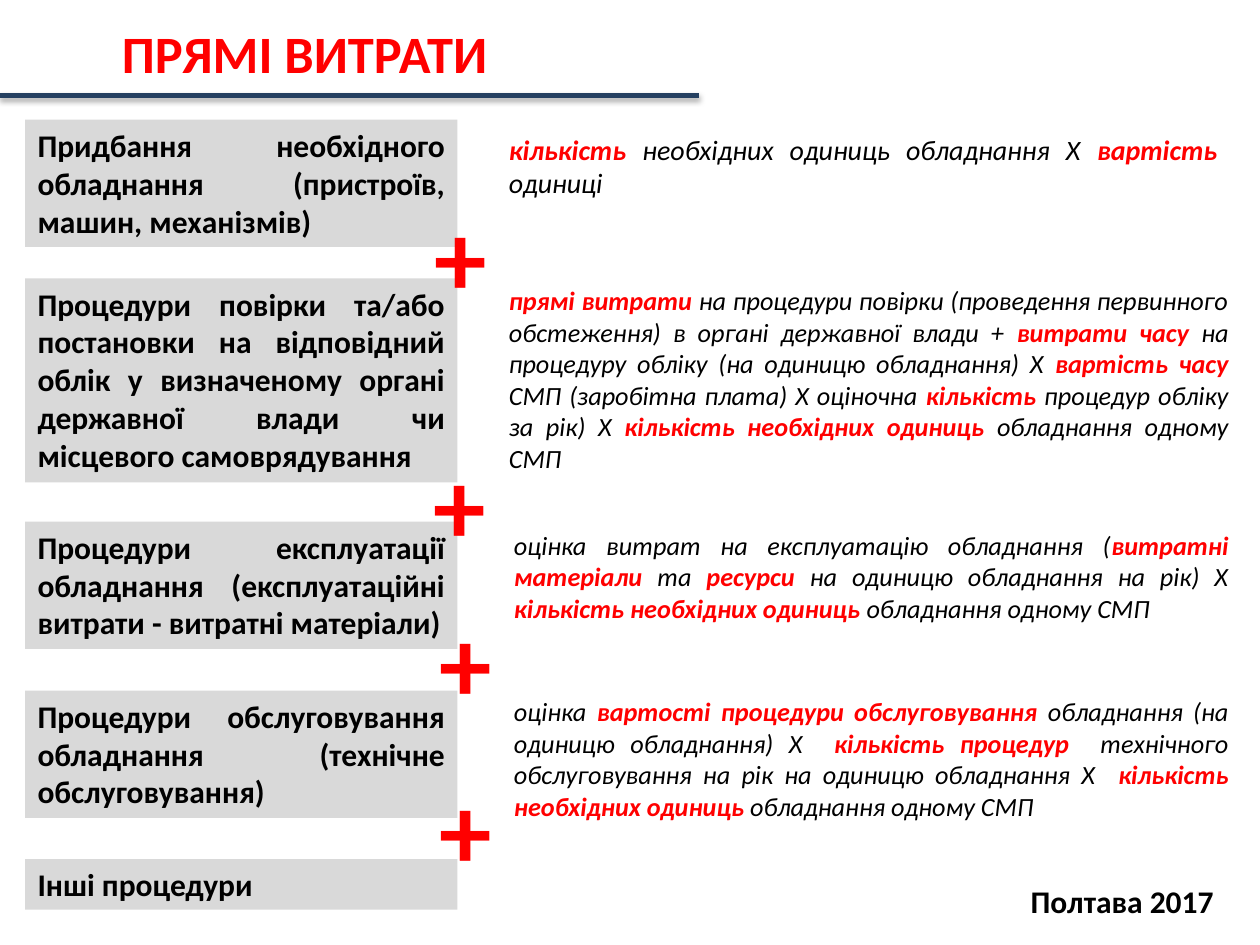
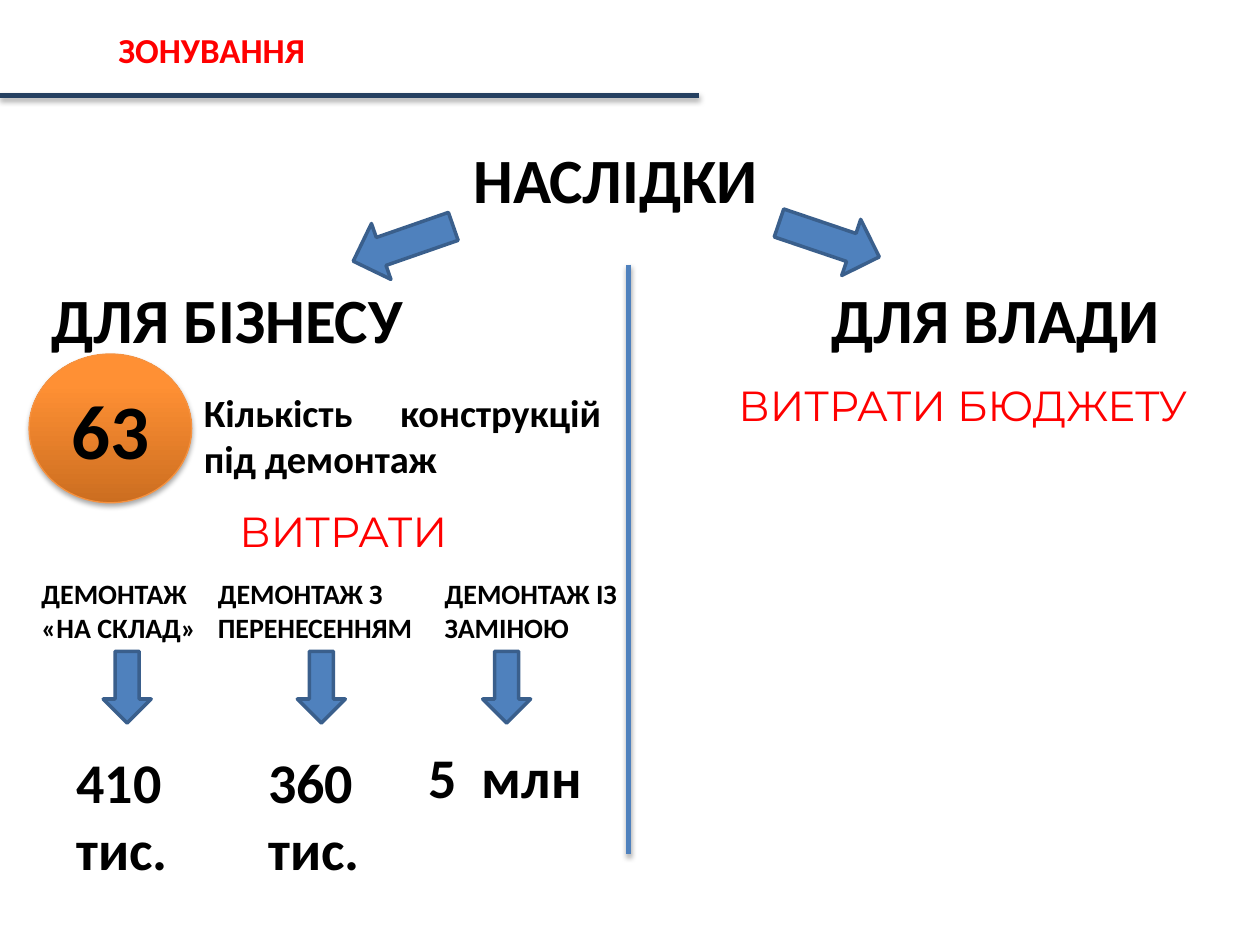
import pptx
import copy
import pptx.util
import pptx.dml.color
import pptx.enum.shapes
import pptx.enum.text
import pptx.oxml.ns
from lxml import etree

Pt = pptx.util.Pt
SHAPE = pptx.enum.shapes.MSO_SHAPE
ALIGN = pptx.enum.text.PP_ALIGN
AUTO = pptx.enum.text.MSO_AUTO_SIZE
ANCHOR = pptx.enum.text.MSO_ANCHOR
qn = pptx.oxml.ns.qn

COLORS = {
    "text": "000000", "accent": "FF0000", "rule": "254061", "panel": "D9D9D9",
    "blue": "4F81BD", "blue_edge": "3A5F8C", "orange_edge": "F69240",
    "orange_dark": "CC6E20", "orange_mid": "FF9034", "orange_light": "FF9136",
}


def rgb(name):
    return pptx.dml.color.RGBColor.from_string(COLORS[name])


class Deck:
    """Holds the shared style and the slide being built."""

    font = "Calibri"

    def __init__(self):
        self.prs = pptx.Presentation()
        self.prs.slide_width, self.prs.slide_height = Pt(720), Pt(540)
        self.slide = None

    def new_slide(self, title, x, y, w, h, size):
        self.slide = self.prs.slides.add_slide(self.prs.slide_layouts[6])
        self.line(0, 54.7, 399.6, 54.7, "rule")
        self.text(title, x, y, w, h, size, color="accent")

    def set_text(self, sp, text, size, color="text", bold=True, align=ALIGN.LEFT, font=None):
        """Fills a shape; parts between asterisks are bold in the accent colour."""
        tf = sp.text_frame
        tf.word_wrap = True
        for i, row in enumerate(text.split("\n")):
            p = tf.add_paragraph() if i else tf.paragraphs[0]
            p.alignment = align
            p.font.size, p.font.name = Pt(size), font or self.font
            parts = row.split("*")
            if len(parts) == 1:
                p.font.bold, p.font.color.rgb = bold, rgb(color)
                p.add_run().text = row
                continue
            p.font.italic = True
            for j, part in enumerate(parts):
                if part:
                    r = p.add_run()
                    r.text = part
                    r.font.bold = j % 2 == 1
                    r.font.color.rgb = rgb("accent" if j % 2 else color)

    def text(self, text, x, y, w, h, size, **style):
        sp = self.slide.shapes.add_textbox(Pt(x), Pt(y), Pt(w), Pt(h))
        self.set_text(sp, text, size, **style)
        sp.text_frame.auto_size = AUTO.SHAPE_TO_FIT_TEXT

    def shape(self, kind, x, y, w, h, fill=None, edge=None, weight=2, rotation=0):
        sp = self.slide.shapes.add_shape(kind, Pt(x), Pt(y), Pt(w), Pt(h))
        sp.shadow.inherit = False
        sp.rotation = rotation
        if fill:
            sp.fill.solid()
            sp.fill.fore_color.rgb = rgb(fill)
        if edge:
            sp.line.color.rgb = rgb(edge)
            sp.line.width = Pt(weight)
        else:
            sp.line.fill.background()
        return sp

    def panel(self, text, x, y, w, h):
        sp = self.shape(SHAPE.RECTANGLE, x, y, w, h, "panel")
        self.set_text(sp, text, 18, align=ALIGN.JUSTIFY)
        sp.text_frame.vertical_anchor = ANCHOR.TOP

    def arrow(self, kind, x, y, w, h, rotation=0):
        self.shape(kind, x, y, w, h, "blue", "blue_edge", rotation=rotation)

    def line(self, x1, y1, x2, y2, color):
        cn = self.slide.shapes.add_connector(
            pptx.enum.shapes.MSO_CONNECTOR.STRAIGHT, Pt(x1), Pt(y1), Pt(x2), Pt(y2))
        cn.line.color.rgb = rgb(color)
        cn.line.width = Pt(3)
        sp_pr = cn._element.spPr
        self.shadow(etree.SubElement(sp_pr, qn("a:effectLst")))

    def shadow(self, effects):
        shdw = etree.SubElement(effects, qn("a:outerShdw"), blurRad=str(Pt(3.1)),
                                dist=str(Pt(1.8)), dir="5400000", rotWithShape="0")
        clr = etree.SubElement(shdw, qn("a:srgbClr"), val=COLORS["text"])
        etree.SubElement(clr, qn("a:alpha"), val="35000")

    def badge(self, text, x, y, w, h):
        sp = self.shape(SHAPE.OVAL, x, y, w, h, edge="orange_edge", weight=0.75)
        sp.fill.gradient()
        sp.fill.gradient_angle = 90
        stops = sp._element.spPr.find(".//" + qn("a:gsLst"))
        stops.append(copy.deepcopy(stops[-1]))
        shades = [("orange_dark", 0), ("orange_mid", 0.8), ("orange_light", 1)]
        for stop, (color, position) in zip(sp.fill.gradient_stops, shades):
            stop.color.rgb = rgb(color)
            stop.position = position
        self.shadow(sp._element.spPr.find(qn("a:effectLst")))
        self.set_text(sp, text, 44, align=ALIGN.CENTER)
        sp.text_frame.vertical_anchor = ANCHOR.MIDDLE


def direct_costs(deck):
    deck.new_slide("ПРЯМІ ВИТРАТИ", 62.6, 8.6, 466.6, 43.9, 30)
    deck.text("Полтава 2017 ", 566.6, 500.4, 153.4, 28.8, 18, align=ALIGN.CENTER)

    # Cost items on the left
    items = [
        ("Придбання необхідного обладнання (пристроїв, машин, механізмів)", 68.4, 72.7),
        ("Процедури повірки та/або постановки на відповідний облік у визначеному "
         "органі державної влади чи місцевого самоврядування", 159.1, 116.6),
        ("Процедури експлуатації обладнання (експлуатаційні витрати - "
         "витратні матеріали)", 298.1, 72.7),
        ("Процедури обслуговування обладнання (технічне обслуговування)", 394.6, 72.7),
        ("Інші процедури", 491, 28.8),
    ]
    for label, y, h in items:
        deck.panel(label, 14.4, y, 247, h)

    # Plus signs between the items
    for x, y in [(241.2, 105.8), (240.5, 247.7), (244.1, 337.7), (244.1, 433.4)]:
        deck.text("+", x, y, 39.6, 79.9, 60, color="accent")

    # Formulas on the right
    formulas = [
        ("*кількість* необхідних одиниць обладнання Х *вартість* одиниці",
         283.7, 72, 419, 46.1, 16),
        ("*прямі витрати *на процедури повірки (проведення первинного обстеження) "
         "в органі державної влади + *витрати часу *на процедуру обліку (на одиницю "
         "обладнання) Х *вартість часу *СМП (заробітна плата) Х оціночна *кількість* "
         "процедур обліку за рік) Х *кількість необхідних одиниць *обладнання одному СМП",
         283.7, 159.1, 425.5, 116.6, 15),
        ("оцінка витрат на експлуатацію обладнання (*витратні матеріали *та *ресурси* "
         "на одиницю обладнання на рік) Х *кількість необхідних одиниць* "
         "обладнання одному СМП", 286.6, 298.8, 422.6, 61.9, 15),
        ("оцінка *вартості процедури обслуговування *обладнання (на одиницю обладнання) "
         "Х  *кількість процедур*  технічного обслуговування на рік на одиницю "
         "обладнання Х  *кількість необхідних одиниць *обладнання одному СМП",
         286.6, 393.8, 422.6, 79.9, 15),
    ]
    for formula, x, y, w, h, size in formulas:
        deck.text(formula, x, y, w, h, size, align=ALIGN.JUSTIFY)


def zoning(deck):
    deck.new_slide("ЗОНУВАННЯ", 60.5, 13, 452.9, 31.7, 20)

    # Consequences split into two branches
    deck.text("НАСЛІДКИ", 263.5, 77, 190.8, 51.1, 36)
    deck.arrow(SHAPE.LEFT_ARROW, 200.2, 122.4, 60.5, 33.8, 340.8)
    deck.arrow(SHAPE.LEFT_ARROW, 443.5, 120.2, 60.5, 33.8, 198.7)
    deck.text("ДЛЯ БІЗНЕСУ", 22.3, 157, 252.7, 51.1, 36)
    deck.text("ДЛЯ ВЛАДИ", 468, 157, 215.3, 51.1, 36)
    deck.line(359.3, 151.2, 359.3, 488.2, "blue")

    # Number of structures
    deck.text("Кількість конструкцій під демонтаж", 109.4, 218.9, 241.2, 60.5, 22,
              align=ALIGN.JUSTIFY)
    deck.badge("63", 16.6, 202.3, 92.9, 85)

    # Cost headings
    for heading, x, y, w in [("ВИТРАТИ", 113, 285.1, 166.3),
                             ("ВИТРАТИ БЮДЖЕТУ", 365.8, 213.1, 368.6)]:
        deck.text(heading, x, y, w, 36, 24, color="accent", bold=False,
                  align=ALIGN.CENTER, font="Montserrat")

    # Dismantling options: label, arrow, amount
    options = [
        ("ДЕМОНТАЖ\n«НА СКЛАД»", 16.6, 109.4, 59, "410  тис.", 36.7, 423.4, 89.3, 85),
        ("ДЕМОНТАЖ З ПЕРЕНЕСЕННЯМ", 117.4, 140.4, 169.9, "360  тис.", 146.2, 423.4, 89.3, 85),
        ("ДЕМОНТАЖ ІЗ ЗАМІНОЮ", 247, 118.8, 275.8, "5  млн", 237.6, 420.5, 106.6, 46.1),
    ]
    for label, x, w, arrow_x, amount, *box in options:
        deck.text(label, x, 326.2, w, 46.1, 16)
        deck.arrow(SHAPE.DOWN_ARROW, arrow_x, 372.2, 27.4, 41)
        deck.text(amount, *box, 32)


def main():
    deck = Deck()
    direct_costs(deck)
    zoning(deck)
    deck.prs.save("out.pptx")


if __name__ == "__main__":
    main()
